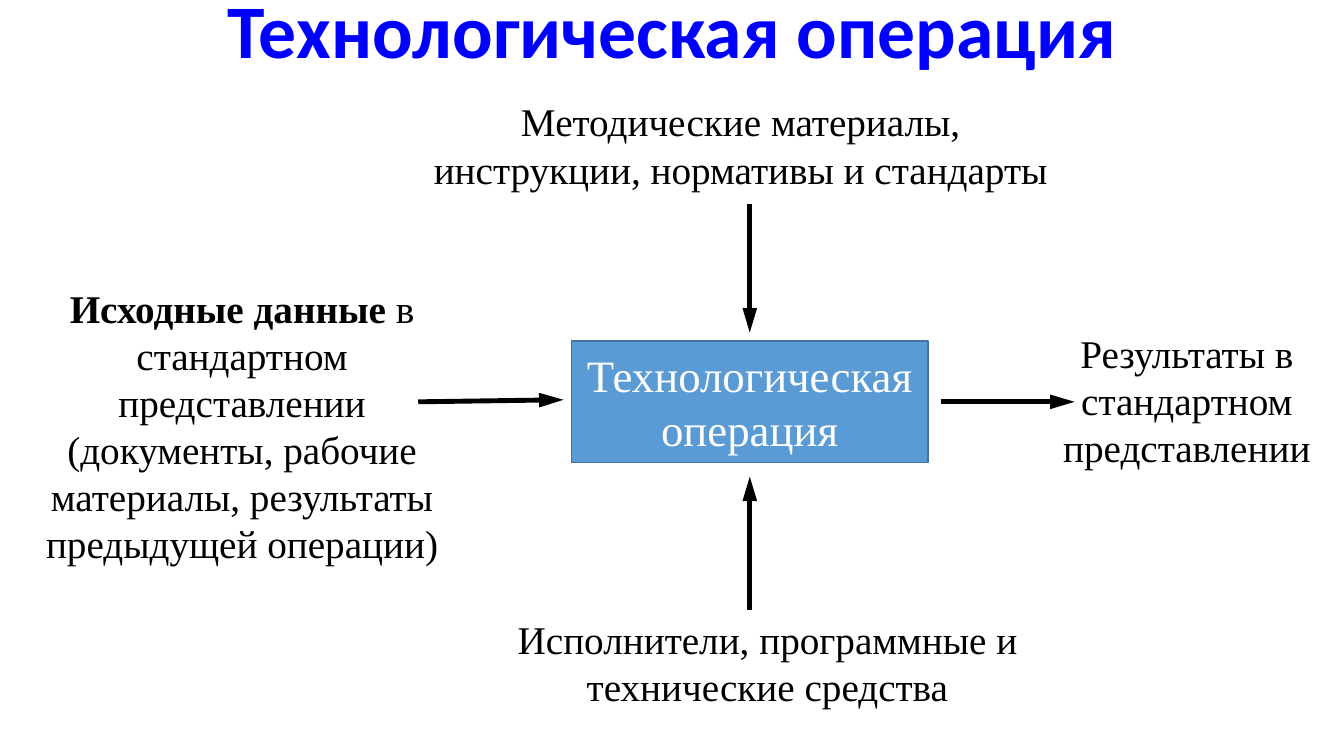
from lxml import etree
from pptx import Presentation
from pptx.dml.color import RGBColor
from pptx.enum.shapes import MSO_CONNECTOR, MSO_SHAPE
from pptx.enum.text import MSO_ANCHOR, MSO_AUTO_SIZE, PP_ALIGN
from pptx.oxml.ns import qn
from pptx.util import Cm, Pt

BLUE = RGBColor(0x00, 0x00, 0xFF)
STEEL = RGBColor(0x5B, 0x9B, 0xD5)
STEEL_DARK = RGBColor(0x43, 0x73, 0x9E)
BLACK = RGBColor(0x00, 0x00, 0x00)
WHITE = RGBColor(0xFF, 0xFF, 0xFF)
SERIF = "Times New Roman"
CENTER = PP_ALIGN.CENTER
TOP, MIDDLE, BOTTOM = MSO_ANCHOR.TOP, MSO_ANCHOR.MIDDLE, MSO_ANCHOR.BOTTOM
RECTANGLE = MSO_SHAPE.RECTANGLE
STRAIGHT = MSO_CONNECTOR.STRAIGHT
FIT_SHAPE = MSO_AUTO_SIZE.SHAPE_TO_FIT_TEXT


def write_text(shape, paragraphs, size=28, font=SERIF, color=BLACK, bold=False,
               lead="", anchor=TOP, spacing=None, wrap=True):
    """Fill a shape with centred paragraphs, the first after an optional bold lead."""
    frame = shape.text_frame
    frame.word_wrap = wrap
    frame.vertical_anchor = anchor
    for index, text in enumerate(paragraphs):
        para = frame.add_paragraph() if index else frame.paragraphs[0]
        para.alignment = CENTER
        if spacing:
            para.line_spacing = spacing
        parts = [(text, bold)]
        if lead and index == 0:
            parts.insert(0, (lead, True))
        for words, strong in parts:
            span = para.add_run()
            span.text = words
            span.font.name = font
            span.font.size = Pt(size)
            span.font.bold = strong
            span.font.color.rgb = color


def add_arrow(page, start_x, start_y, end_x, end_y):
    """Draw a thick black arrow between two points."""
    arrow = page.shapes.add_connector(
        STRAIGHT, Cm(start_x), Cm(start_y), Cm(end_x), Cm(end_y))
    arrow.line.color.rgb = BLACK
    arrow.line.width = Pt(3.5)
    etree.SubElement(arrow.line._get_or_add_ln(), qn("a:tailEnd"),
                     type="triangle", w="med", len="lg")
    etree.SubElement(arrow._element.spPr, qn("a:effectLst"))


def add_title(page, left, top, width, height):
    """Place the slide title at the bottom of its box."""
    box = page.shapes.add_textbox(Cm(left), Cm(top), Cm(width), Cm(height))
    write_text(box, ["Технологическая операция"], size=54, font="Calibri",
               color=BLUE, bold=True, anchor=BOTTOM, spacing=0.9)


def add_operation(page, left, top, width, height):
    """Place the operation in its box, with labels and arrows around it."""
    operation = page.shapes.add_shape(
        RECTANGLE, Cm(left), Cm(top), Cm(width), Cm(height))
    operation.shadow.inherit = False
    operation.fill.solid()
    operation.fill.fore_color.rgb = STEEL
    operation.line.color.rgb = STEEL_DARK
    operation.line.width = Pt(1)
    write_text(operation, ["Технологическая операция"], size=32, color=WHITE,
               anchor=MIDDLE)

    labels = [
        (-3.81, -6.25, 16.15, 2.64,
         ["Методические материалы,", "инструкции, нормативы и стандарты"],
         {"wrap": False}),
        (-2.11, 6.78, 14.1, 2.64,
         ["Исполнители, программные и технические средства"], {}),
        (-13.94, -1.55, 11.28, 7.44,
         ["в стандартном представлении (документы, рабочие материалы, "
          "результаты предыдущей операции)"], {"lead": "Исходные данные "}),
        (11.61, -0.41, 7.8, 3.84,
         ["Результаты в стандартном представлении"], {}),
    ]
    for across, down, label_width, label_height, paragraphs, style in labels:
        label = page.shapes.add_textbox(
            Cm(left + across), Cm(top + down), Cm(label_width), Cm(label_height))
        write_text(label, paragraphs, **style)
        label.text_frame.auto_size = FIT_SHAPE

    center, middle = left + width / 2, top + height / 2
    right, bottom = left + width, top + height
    add_arrow(page, center, top - 3.46, center, top - 0.21)
    add_arrow(page, left - 3.86, middle, left - 0.2, middle - 0.05)
    add_arrow(page, right + 0.33, middle, right + 3.69, middle)
    add_arrow(page, center, bottom + 3.71, center, bottom + 0.35)


def main():
    """Build the slide and save the deck."""
    deck = Presentation()
    deck.slide_width, deck.slide_height = Cm(33.87), Cm(19.05)
    page = deck.slides.add_slide(deck.slide_layouts[6])
    add_title(page, 0, -0.25, 33.87, 2.26)
    add_operation(page, 14.4, 8.59, 8.99, 3.07)
    deck.save("out.pptx")


if __name__ == "__main__":
    main()
